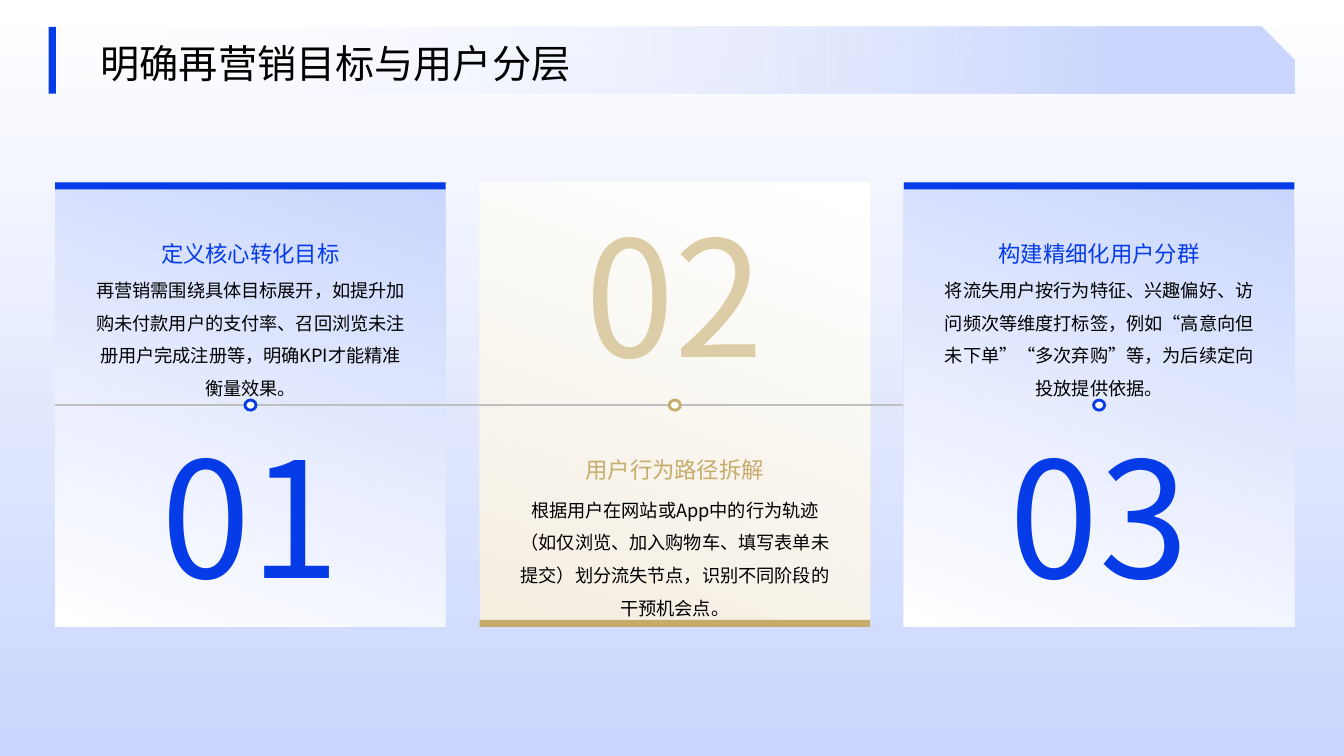
from lxml.etree import SubElement
from pptx import Presentation
from pptx.dml.color import RGBColor
from pptx.enum.shapes import MSO_CONNECTOR, MSO_SHAPE as SHAPE
from pptx.enum.text import MSO_ANCHOR as ANCHOR, PP_ALIGN as ALIGN
from pptx.oxml.ns import qn
from pptx.util import Pt

FONT = "Noto Sans CJK SC"
WHITE = RGBColor(0xFF, 0xFF, 0xFF)
BLACK = RGBColor(0x00, 0x00, 0x00)
BLUE = RGBColor(0x06, 0x3C, 0xE8)
LIGHT_BLUE = RGBColor(0x60, 0x85, 0xFB)
PALE_BLUE = RGBColor(0xCA, 0xD6, 0xFE)
GOLD = RGBColor(0xC6, 0xAB, 0x6A)
LIGHT_GOLD = RGBColor(0xDD, 0xCD, 0xA6)
PALE_GOLD = RGBColor(0xF4, 0xEE, 0xE1)
GREY = RGBColor(0xBF, 0xBF, 0xBF)

prs = Presentation()
prs.slide_width, prs.slide_height = Pt(960), Pt(540)
slide = prs.slides.add_slide(prs.slide_layouts[6])


def paint(fill, *colors, angle=0):
    """Fill with one colour, or with a two-colour gradient turned clockwise."""
    if len(colors) == 1:
        fill.solid()
        fill.fore_color.rgb = colors[0]
        return
    fill.gradient()
    fill.gradient_angle = (360 - angle) % 360
    for stop, color, position in zip(fill.gradient_stops, colors, (0, 1)):
        stop.color.rgb = color
        stop.position = position


def add_text(text, left, top, width, height, size, colors, align=ALIGN.CENTER,
             anchor=ANCHOR.TOP, spacing=None, margins=(0, 0)):
    frame = slide.shapes.add_textbox(Pt(left), Pt(top), Pt(width), Pt(height)).text_frame
    frame.word_wrap = True
    frame.vertical_anchor = anchor
    frame.margin_left = frame.margin_right = Pt(margins[0])
    frame.margin_top = frame.margin_bottom = Pt(margins[1])
    paragraph = frame.paragraphs[0]
    paragraph.alignment = align
    paragraph.line_spacing = spacing
    run = paragraph.add_run()
    run.text = text
    run.font.size = Pt(size)
    run.font.name = FONT
    paint(run.font.fill, *colors, angle=110)
    SubElement(run.font._element, qn("a:ea")).set("typeface", FONT)


CARD_LEFT, CARD_TOP, CARD_WIDTH, CARD_HEIGHT, CARD_PITCH = 39.4, 130.3, 279, 317.5, 303.1
BAR_HEIGHT = 5
LINE_Y = 289.4
DOT_WIDTH, DOT_HEIGHT = 7.9, 7.2

# number, heading, body, flipped
cards = [
    ("01", "定义核心转化目标",
     "再营销需围绕具体目标展开，如提升加购未付款用户的支付率、召回浏览未注册用户完成注册等，明确KPI才能精准衡量效果。", False),
    ("02", "用户行为路径拆解",
     "根据用户在网站或App中的行为轨迹（如仅浏览、加入购物车、填写表单未提交）划分流失节点，识别不同阶段的干预机会点。", True),
    ("03", "构建精细化用户分群",
     "将流失用户按行为特征、兴趣偏好、访问频次等维度打标签，例如“高意向但未下单”“多次弃购”等，为后续定向投放提供依据。", False),
]

backdrop = slide.shapes.add_shape(SHAPE.RECTANGLE, 0, 0, prs.slide_width, prs.slide_height)
backdrop.shadow.inherit = False
backdrop.line.fill.background()
paint(backdrop.fill, WHITE, PALE_BLUE, angle=90)

# Panels: the timeline runs over the first two and behind the last
for i, (number, heading, body, flipped) in enumerate(cards):
    if i == len(cards) - 1:
        timeline = slide.shapes.add_connector(
            MSO_CONNECTOR.STRAIGHT, Pt(CARD_LEFT), Pt(LINE_Y), Pt(894.2), Pt(LINE_Y))
        timeline.line.color.rgb = GREY
        timeline.line.width = Pt(1)
        SubElement(timeline._element.spPr, qn("a:effectLst"))
    left = CARD_LEFT + i * CARD_PITCH
    bar_top = CARD_TOP + CARD_HEIGHT - BAR_HEIGHT if flipped else CARD_TOP
    panel_colors = (PALE_GOLD if flipped else PALE_BLUE, WHITE)
    bar_colors = (GOLD if flipped else BLUE,)
    for top, height, colors in ((CARD_TOP, CARD_HEIGHT, panel_colors),
                                (bar_top, BAR_HEIGHT, bar_colors)):
        block = slide.shapes.add_shape(
            SHAPE.RECTANGLE, Pt(left), Pt(top), Pt(CARD_WIDTH), Pt(height))
        block.shadow.inherit = False
        block.line.fill.background()
        block.rotation = 180 if flipped else 0
        paint(block.fill, *colors, angle=110)

for i, (number, heading, body, flipped) in enumerate(cards):
    center = CARD_LEFT + i * CARD_PITCH + CARD_WIDTH / 2
    accent = GOLD if flipped else BLUE
    dot = slide.shapes.add_shape(SHAPE.OVAL, Pt(center - DOT_WIDTH / 2),
                                 Pt(LINE_Y - DOT_HEIGHT / 2), Pt(DOT_WIDTH), Pt(DOT_HEIGHT))
    dot.shadow.inherit = False
    paint(dot.fill, WHITE)
    dot.line.color.rgb = accent
    dot.line.width = Pt(2)

    heading_top, body_top, number_top = (301, 348.5, 140.4) if flipped else (146.9, 191.5, 298.1)
    number_width = 183 if flipped else 157.7
    number_colors = (LIGHT_GOLD, GOLD) if flipped else (BLUE, LIGHT_BLUE)
    add_text(heading, center - 113.5, heading_top, 227, 43.9, size=16, colors=[accent],
             anchor=ANCHOR.BOTTOM, spacing=1.2)
    add_text(body, center - 113, body_top, 226, 87.1, size=13, colors=[BLACK], spacing=1.5)
    add_text(number, center - number_width / 2, number_top, number_width, 139.7,
             size=115, colors=number_colors)

# Title band, fading in from the left
band = slide.shapes.add_shape(SHAPE.SNIP_1_RECTANGLE, Pt(34.8), Pt(19.2), Pt(890), Pt(47.8))
band.shadow.inherit = False
band.line.fill.background()
band.adjustments[0] = 0.5
paint(band.fill, WHITE, PALE_BLUE)
band.fill.gradient_stops[1].position = 0.87
clear_stop = band._element.spPr.find(".//" + qn("a:srgbClr"))
SubElement(clear_stop, qn("a:alpha")).set("val", "0")

title_mark = slide.shapes.add_shape(SHAPE.RECTANGLE, Pt(34.8), Pt(19.2), Pt(5.2), Pt(47.8))
title_mark.shadow.inherit = False
title_mark.line.fill.background()
paint(title_mark.fill, BLUE)

add_text("明确再营销目标与用户分层", 64.8, 25.2, 820, 36, size=28, colors=[BLACK],
         align=ALIGN.LEFT, anchor=ANCHOR.MIDDLE, spacing=1.1, margins=(7.2, 3.6))

prs.save("out.pptx")
